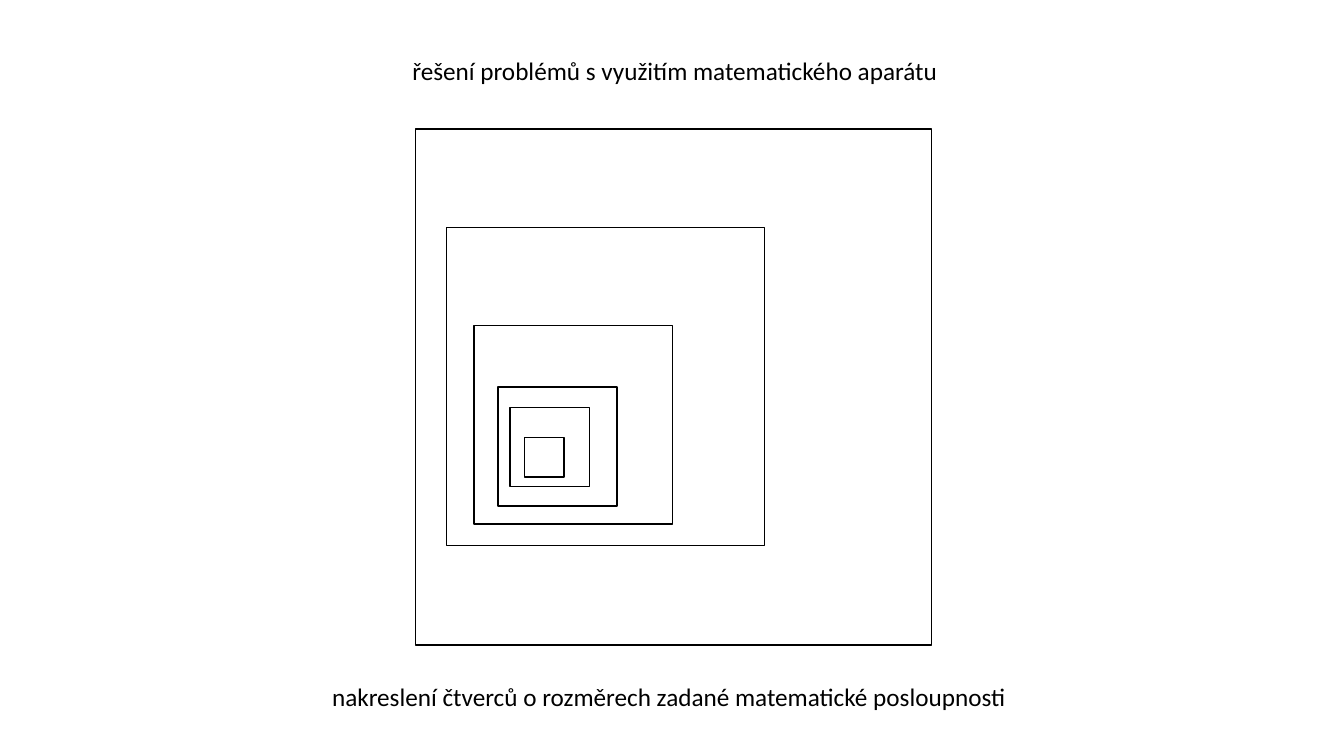
from pptx import Presentation
from pptx.dml.color import RGBColor
from pptx.enum.shapes import MSO_SHAPE
from pptx.enum.text import MSO_ANCHOR, MSO_AUTO_SIZE, PP_ALIGN
from pptx.util import Inches, Pt

COLORS = {"ink": "000000", "paper": "FFFFFF"}
FONT = "Calibri"
UNIT = 5.12 / 13  # side of the smallest square, in inches

# Fibonacci side, left and top offset within the largest square, filled
SQUARES = [
    (3, 0.82, 2.56, True),
    (5, 0.58, 1.95, False),
    (8, 0.31, 0.98, False),
    (13, 0, 0, False),
    (2, 0.94, 2.76, True),
    (1, 1.08, 3.06, True),
]


def color(name):
    return RGBColor.from_string(COLORS[name])


def write_line(shape, box, text, alignment):
    """Place a text shape in its box and write one line into it."""
    shape.left, shape.top, shape.width, shape.height = map(Inches, box)
    frame = shape.text_frame
    frame.word_wrap = True
    frame.auto_size = MSO_AUTO_SIZE.NONE
    frame.vertical_anchor = MSO_ANCHOR.TOP
    paragraph = frame.paragraphs[0]
    paragraph.alignment = alignment
    run = paragraph.add_run()
    run.text = text
    run.font.name = FONT
    run.font.size = Pt(18)
    run.font.color.rgb = color("ink")


def add_title(slide, box):
    write_line(slide.shapes.title, box,
               "řešení problémů s využitím matematického aparátu", PP_ALIGN.LEFT)


def add_squares(slide, left, top):
    """Draw the nested squares from the corner of the largest one."""
    for side, across, down, filled in SQUARES:
        length = Inches(side * UNIT)
        square = slide.shapes.add_shape(
            MSO_SHAPE.RECTANGLE, Inches(left + across), Inches(top + down), length, length)
        square.shadow.inherit = False
        square.line.color.rgb = color("ink")
        square.line.width = Pt(1)
        if filled:
            square.fill.solid()
            square.fill.fore_color.rgb = color("paper")
        else:
            square.fill.background()


def add_caption(slide, box):
    caption = slide.shapes.add_textbox(*map(Inches, box))
    write_line(caption, box,
               "nakreslení čtverců o rozměrech zadané matematické posloupnosti",
               PP_ALIGN.CENTER)


def main():
    presentation = Presentation()
    presentation.slide_width = Inches(13.33)
    presentation.slide_height = Inches(7.5)
    title_only = presentation.slide_layouts[5]
    slide = presentation.slides.add_slide(title_only)
    slide.background.fill.solid()
    slide.background.fill.fore_color.rgb = color("paper")

    add_squares(slide, 4.12, 1.28)
    add_title(slide, (3.99, 0.5, 5.52, 0.4))
    add_caption(slide, (2.02, 6.71, 9.23, 0.4))

    presentation.save("out.pptx")


if __name__ == "__main__":
    main()
